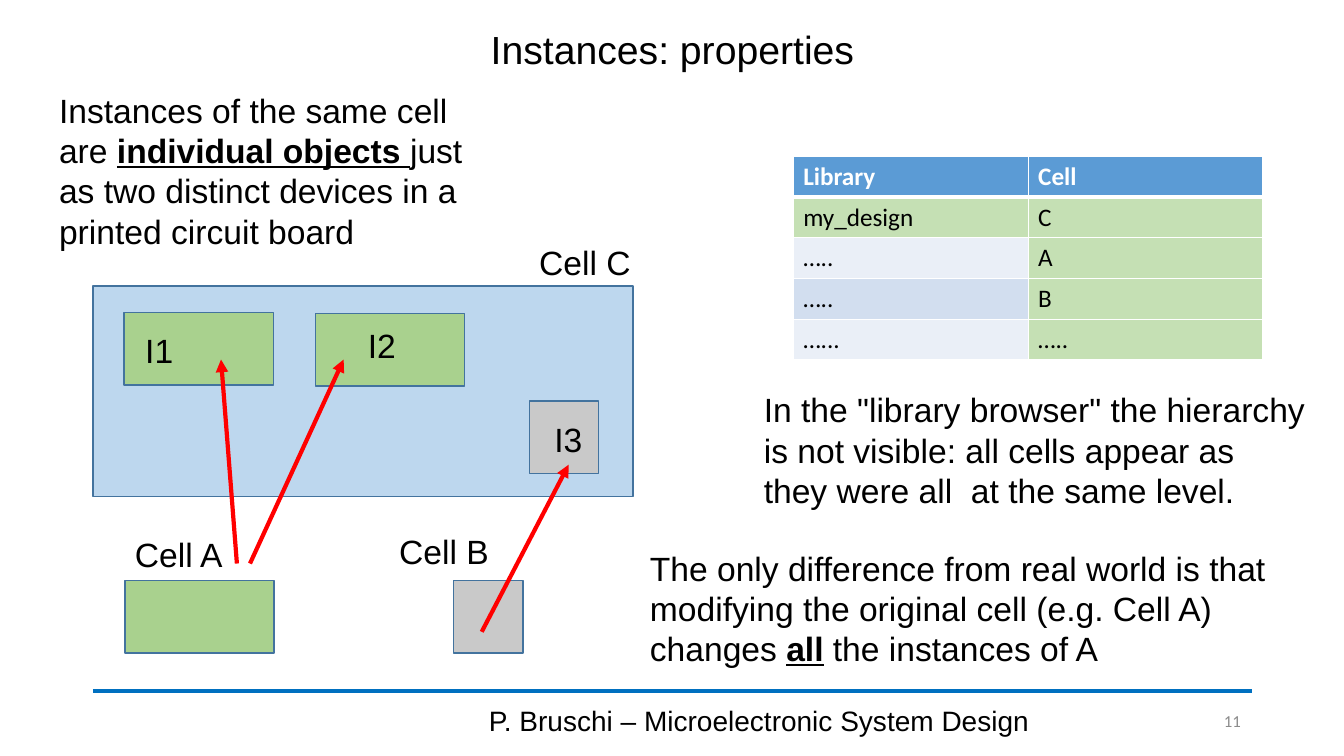
import pptx
import pptx.util
import pptx.dml.color
import pptx.enum.shapes
import pptx.enum.text
import pptx.oxml
import pptx.oxml.ns
import lxml.etree

Cm = pptx.util.Cm
Pt = pptx.util.Pt
ALIGN = pptx.enum.text.PP_ALIGN
MIDDLE = pptx.enum.text.MSO_ANCHOR.MIDDLE
GREEN, GRAY, EDGE = "A9D18E", "C9C9C9", "43739E"


def color(value):
    return pptx.dml.color.RGBColor.from_string(value)


def set_font(p, size, name="Arial", value="000000", bold=None):
    p.font.size = Pt(size)
    p.font.name = name
    p.font.color.rgb = color(value)
    p.font.bold = bold


def add_text(s, box, paragraphs, size=24, align=ALIGN.LEFT, wrap=True,
             anchor=None, name="Arial", value="000000"):
    tf = s.shapes.add_textbox(*map(Cm, box)).text_frame
    tf.word_wrap = wrap
    tf.vertical_anchor = anchor
    for i, runs in enumerate(paragraphs):
        p = tf.add_paragraph() if i else tf.paragraphs[0]
        p.alignment = align
        set_font(p, size, name, value)
        for j, text in enumerate(runs):
            r = p.add_run()
            r.text = text
            if j % 2:
                r.font.bold = r.font.underline = True


def add_rect(s, box, fill):
    sp = s.shapes.add_shape(pptx.enum.shapes.MSO_SHAPE.RECTANGLE, *map(Cm, box))
    sp.shadow.inherit = False
    sp.fill.solid()
    sp.fill.fore_color.rgb = color(fill)
    sp.line.color.rgb = color(EDGE)
    sp.line.width = Pt(1)


def add_line(s, ends, value, width, arrow=False):
    line = s.shapes.add_connector(
        pptx.enum.shapes.MSO_CONNECTOR.STRAIGHT, *map(Cm, ends))
    line.line.color.rgb = color(value)
    line.line.width = Pt(width)
    if arrow:
        lxml.etree.SubElement(line.line._get_or_add_ln(),
                              pptx.oxml.ns.qn("a:tailEnd"), type="triangle")
    lxml.etree.SubElement(line._element.spPr, pptx.oxml.ns.qn("a:effectLst"))


def add_title(s, box):
    sp = s.shapes.title
    sp.left, sp.top, sp.width, sp.height = map(Cm, box)
    tf = sp.text_frame
    tf.text = "Instances: properties"
    tf.vertical_anchor = MIDDLE
    p = tf.paragraphs[0]
    p.alignment = ALIGN.CENTER
    p.line_spacing = 0.9
    set_font(p, 28)


def add_hierarchy(s, box):
    x, y, w, h = box
    add_rect(s, box, "BDD7EE")
    wide, narrow, high = 3.76, 1.75, 1.83
    for dx, dy, width, fill in [
        (0.81, 7.42, wide, GREEN),
        (9.09, 7.42, narrow, GRAY),
        (0.79, 0.66, wide, GREEN),
        (5.61, 0.69, wide, GREEN),
        (11, 2.9, narrow, GRAY),
    ]:
        add_rect(s, (x + dx, y + dy, width, high), fill)
    for x1, y1, x2, y2 in [
        (3.63, 6.99, 3.23, 1.85),
        (3.96, 6.99, 6.32, 1.85),
        (9.8, 8.71, 11.99, 4.5),
    ]:
        add_line(s, (x + x1, y + y1, x + x2, y + y2), "FF0000", 3, arrow=True)
    for text, dx, dy, width in [
        ("Cell C", 11, -1.24, 2.84),
        ("Cell A", 0.81, 6.12, 2.84),
        ("Cell B", 7.47, 6.05, 2.84),
        ("I1", 1.07, 0.97, 1.22),
        ("I2", 6.68, 0.86, 1.22),
        ("I3", 11.38, 3.23, 1.22),
    ]:
        add_text(s, (x + dx, y + dy, width, 1.27), [[text]], wrap=False)


def set_borders(cell, row):
    tcPr = cell._tc.get_or_add_tcPr()
    for side in "LRTB":
        thick = (row, side) in [(0, "B"), (1, "T")]
        tcPr.append(pptx.oxml.parse_xml(
            f'<a:ln{side} {pptx.oxml.ns.nsdecls("a")} w="{Pt(3 if thick else 1)}">'
            f'<a:solidFill><a:srgbClr val="FFFFFF"/></a:solidFill></a:ln{side}>'))


def add_library_table(s, box):
    header, listed, light, band = "5B9BD5", "C5E0B4", "EAEFF7", "D2DEEF"
    rows = [
        ("Library", "Cell", header, header),
        ("my_design", "C", listed, listed),
        ("…..", "A", light, listed),
        ("…..", "B", band, listed),
        ("…...", "…..", light, listed),
    ]
    table = s.shapes.add_table(len(rows), 2, *map(Cm, box)).table
    for i, row in enumerate(rows):
        table.rows[i].height = Cm(box[3] / len(rows))
        for j in range(2):
            cell = table.cell(i, j)
            set_borders(cell, i)
            cell.fill.solid()
            cell.fill.fore_color.rgb = color(row[j + 2])
            cell.text = row[j]
            set_font(cell.text_frame.paragraphs[0], 18, "Calibri",
                     "000000" if i else "FFFFFF", i == 0)


def add_footer(s, box):
    x, y, w, h = box
    add_line(s, (x, y, x + w, y), "0070C0", 2.75)
    add_text(s, (x + 8.89, y + 0.23, 15.8, h),
             [["P. Bruschi – Microelectronic System Design"]],
             size=20, align=ALIGN.CENTER, anchor=MIDDLE)
    add_text(s, (x + w - 2.47, y + 0.23, 2.44, h), [["11"]], size=12,
             align=ALIGN.RIGHT, anchor=MIDDLE, name="Calibri", value="8C8C8C")


def main():
    prs = pptx.Presentation()
    prs.slide_width, prs.slide_height = Cm(33.87), Cm(19.05)
    s = prs.slides.add_slide(prs.slide_layouts[5])
    add_title(s, (2.34, 0.38, 29.21, 1.83))
    add_hierarchy(s, (2.34, 7.21, 13.61, 5.31))
    add_library_table(s, (19.99, 3.94, 11.84, 5.13))
    add_text(s, (1.24, 2.13, 11.4, 4.37), [
        ["Instances of the same cell are ", "individual objects ",
         "just as two distinct devices in a"],
        ["printed circuit board"],
    ])
    add_text(s, (16.13, 13.67, 17.55, 3.33), [
        ["The only difference from real world is that modifying the original "
         "cell (e.g. Cell A) changes ", "all", " the instances of A"],
    ])
    add_text(s, (19, 9.68, 14.17, 3.33), [
        ['In the "library browser" the hierarchy is not visible: all cells '
         "appear as they were all  at the same level."],
    ])
    add_footer(s, (2.34, 17.42, 29.21, 1.02))
    prs.save("out.pptx")


if __name__ == "__main__":
    main()
